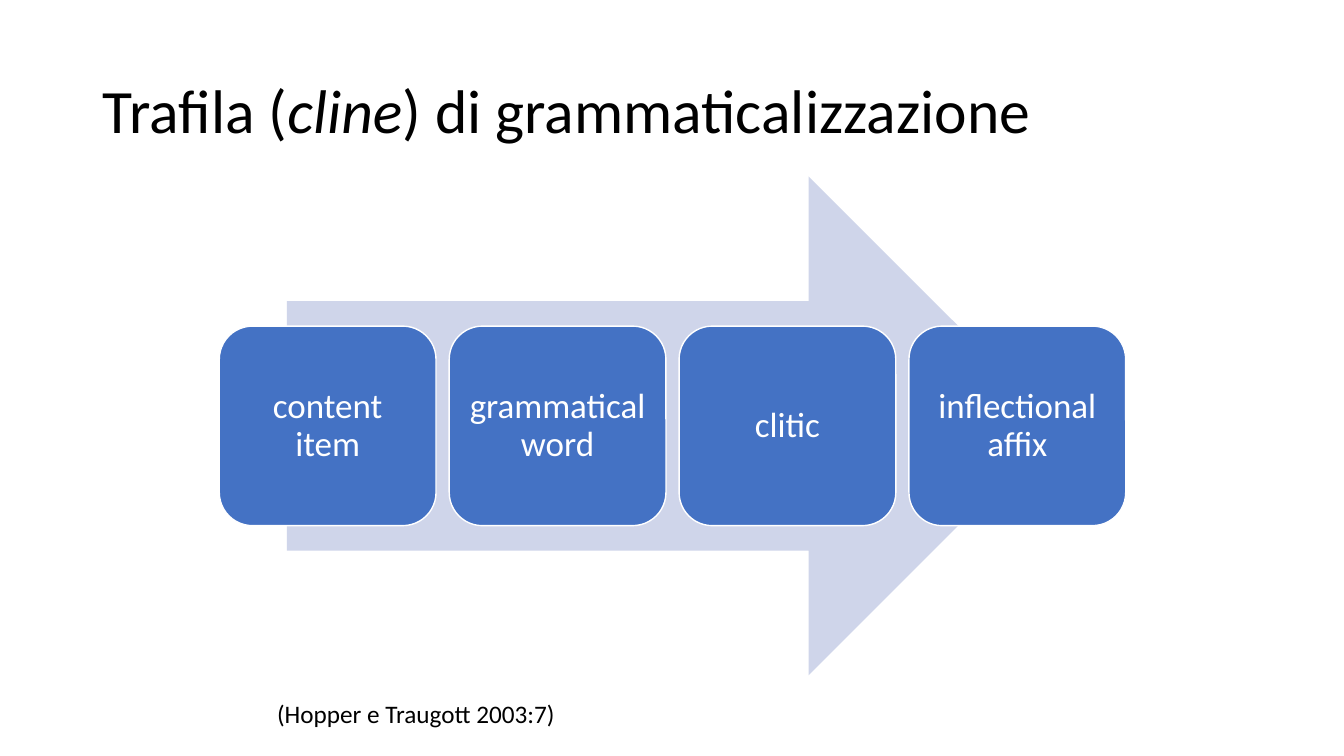
from pptx import Presentation
from pptx.dml.color import RGBColor
from pptx.enum.shapes import MSO_SHAPE as Shape
from pptx.enum.text import MSO_ANCHOR as Anchor, MSO_AUTO_SIZE as AutoSize, PP_ALIGN as Align
from pptx.util import Inches, Pt

COLORS = {"ink": "000000", "stage": "4472C4", "arrow": "CFD5EA", "white": "FFFFFF"}
FONT = "Calibri"
STAGES = ["content item", "grammatical word", "clitic", "inflectional affix"]


def color(name):
    return RGBColor.from_string(COLORS[name])


def add_run(paragraph, text, size, color_name, italic=False):
    run = paragraph.add_run()
    run.text = text
    run.font.name = FONT
    run.font.size = Pt(size)
    run.font.italic = italic
    run.font.color.rgb = color(color_name)


def add_filled(slide, preset, box, fill):
    shape = slide.shapes.add_shape(preset, *map(Inches, box))
    shape.shadow.inherit = False
    shape.fill.solid()
    shape.fill.fore_color.rgb = color(fill)
    return shape


def place_title(slide, box):
    title = slide.shapes.title
    title.left, title.top, title.width, title.height = map(Inches, box)
    frame = title.text_frame
    frame.vertical_anchor = Anchor.MIDDLE
    frame.auto_size = AutoSize.NONE
    heading = frame.paragraphs[0]
    heading.alignment = Align.LEFT
    heading.line_spacing = 0.9
    for text, italic in [("Trafila (", False), ("cline", True),
                         (") di grammaticalizzazione", False)]:
        add_run(heading, text, 44, "ink", italic)


def place_stage(slide, box, label):
    stage = add_filled(slide, Shape.ROUNDED_RECTANGLE, box, "stage")
    stage.line.color.rgb = color("white")
    stage.line.width = Pt(1)
    frame = stage.text_frame
    frame.word_wrap = True
    frame.vertical_anchor = Anchor.MIDDLE
    frame.margin_left = frame.margin_right = Inches(0.1)
    frame.margin_top = frame.margin_bottom = Inches(0.1)
    paragraph = frame.paragraphs[0]
    paragraph.alignment = Align.CENTER
    paragraph.line_spacing = 0.9
    add_run(paragraph, label, 25, "white")


def place_cline(slide, box):
    left, top, width, height = box
    # Arrow behind the stages, centred in 85% of the width
    arrow_width = 0.85 * width
    arrow = add_filled(slide, Shape.RIGHT_ARROW,
                       (left + (width - arrow_width) / 2, top, arrow_width, height), "arrow")
    arrow.line.fill.background()
    # Stages in a row, equally spaced
    stage_width, stage_height = 2.15, 0.4 * height
    step = 2.28
    row_left = left + (width - step * (len(STAGES) - 1) - stage_width) / 2
    row_top = top + (height - stage_height) / 2
    for index, label in enumerate(STAGES):
        place_stage(slide, (row_left + index * step, row_top, stage_width, stage_height), label)


def place_citation(slide, box):
    citation = slide.shapes.add_textbox(*map(Inches, box))
    frame = citation.text_frame
    frame.word_wrap = False
    frame.auto_size = AutoSize.SHAPE_TO_FIT_TEXT
    add_run(frame.paragraphs[0], "(Hopper e Traugott 2003:7)", 18, "ink")


def main():
    deck = Presentation()
    deck.slide_width, deck.slide_height = Inches(13.33), Inches(7.5)
    slide = deck.slides.add_slide(deck.slide_layouts[5])
    place_title(slide, (0.92, 0.4, 11.5, 1.45))
    place_cline(slide, (2.17, 1.75, 9, 4.95))
    place_citation(slide, (2.65, 6.88, 2.99, 0.4))
    deck.save("out.pptx")


if __name__ == "__main__":
    main()
